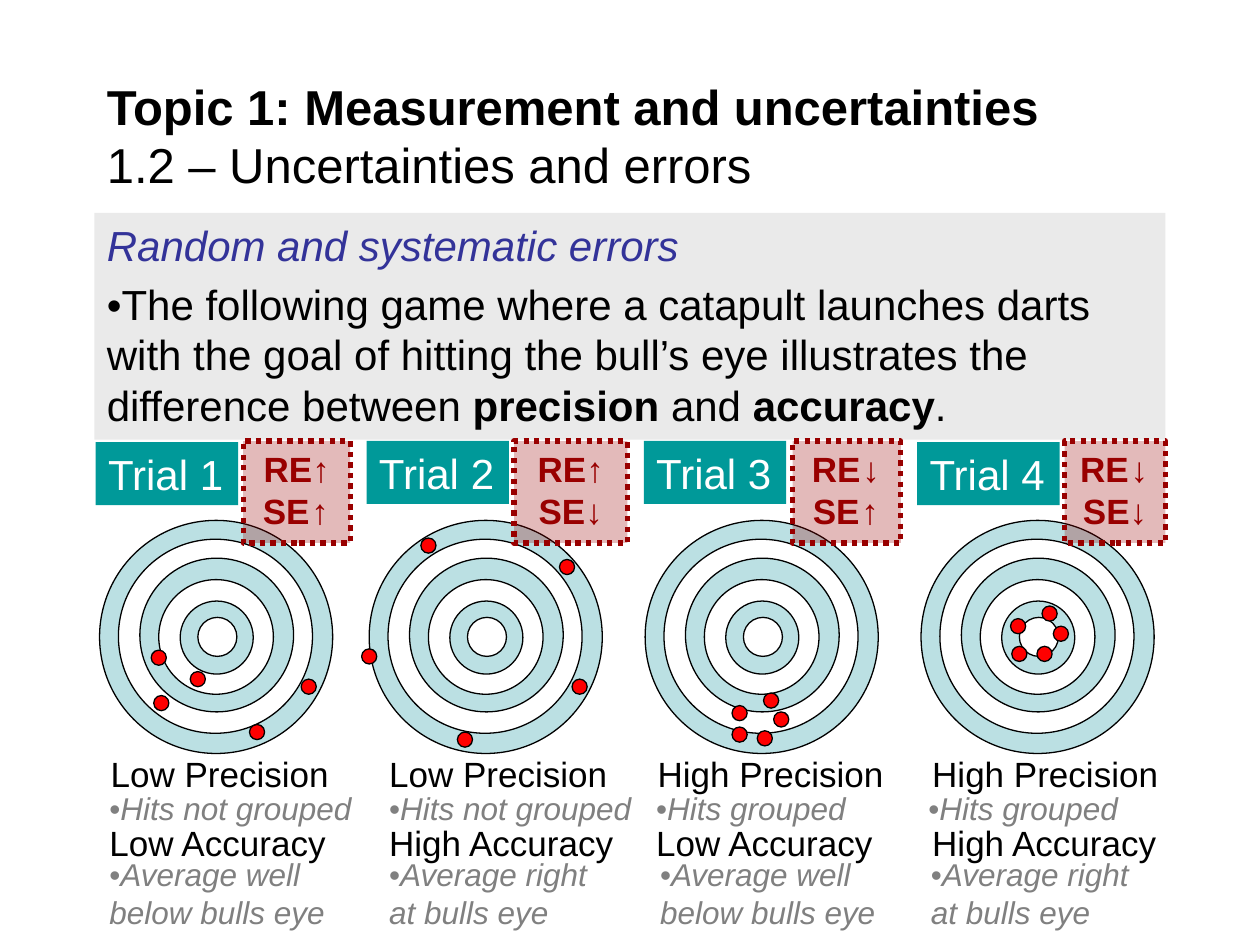
from lxml import etree
from pptx import Presentation
from pptx.dml.color import RGBColor
from pptx.enum.dml import MSO_LINE
from pptx.enum.shapes import MSO_SHAPE
from pptx.enum.text import MSO_ANCHOR, MSO_AUTO_SIZE, PP_ALIGN
from pptx.oxml.ns import qn
from pptx.util import Pt

PX = 9144  # 100 px to the inch
FONT, ARROW_FONT = "Arial", "Courier New"
COLORS = {
    "panel": "EAEAEA", "heading": "333399", "text": "000000", "note": "808080",
    "label": "009999", "white": "FFFFFF", "ring": "BBE0E3", "dart": "FF0000",
    "badge": "990000",
}
# Left offset, top offset and diameter, from the outside in
RINGS = [(0, 0, 185), (15, 15, 154), (32, 30, 122),
         (47, 47, 91), (64, 64, 58), (78, 77, 31)]
RINGS_TOP, DART_SIZE = 413, 12

LOW_PRECISION = [("Low Precision", 193), ("Hits not grouped", 215)]
HIGH_PRECISION = [("High Precision", 201), ("Hits grouped", 173)]
LOW_ACCURACY = [("Low Accuracy", 193), ("Average well below bulls eye", 194)]
HIGH_ACCURACY = [("High Accuracy", 199), ("Average right at bulls eye", 194)]
CAPTION_ROWS = [(592, 43), (621, 40), (647, 43), (674, 70)]

TRIALS = [
    {"label": (76, 351), "target": 79, "badge": (193, 85),
     "errors": [("RE↑SE", FONT), ("↑", ARROW_FONT)],
     "darts": [(198, 575), (120, 516), (122, 552), (151, 533), (239, 539)],
     "captions": LOW_PRECISION + LOW_ACCURACY, "lefts": [78, 77, 77, 77]},
    {"label": (291, 350), "target": 293, "badge": (408, 90),
     "errors": [("RE↑SE↓", FONT)],
     "darts": [(334, 427), (444, 444), (287, 515), (363, 581), (454, 539)],
     "captions": LOW_PRECISION + HIGH_ACCURACY, "lefts": [299] * 4},
    {"label": (511, 350), "target": 512, "badge": (629, 86),
     "errors": [("RE", FONT), ("↓", ARROW_FONT), ("SE", FONT), ("↑", ARROW_FONT)],
     "darts": [(601, 580), (606, 550), (581, 577), (581, 560), (614, 565)],
     "captions": HIGH_PRECISION + LOW_ACCURACY, "lefts": [512, 511, 511, 514]},
    {"label": (728, 351), "target": 731, "badge": (845, 80),
     "errors": [("RE", FONT), ("↓", ARROW_FONT), ("SE↓", FONT)],
     "darts": [(823, 513), (827, 481), (803, 513), (802, 491), (836, 497)],
     "captions": HIGH_PRECISION + HIGH_ACCURACY, "lefts": [730, 727, 730, 729]},
]


def rgb(name):
    return RGBColor.from_string(COLORS[name])


def box(*lengths):
    return [length * PX for length in lengths]


def style(paragraph, size, color, italic=None, bold=None):
    font = paragraph.font
    font.name, font.size = FONT, Pt(size)
    font.italic, font.bold = italic, bold
    font.color.rgb = rgb(color)
    paragraph.alignment = PP_ALIGN.LEFT


def add_run(paragraph, text, **settings):
    run = paragraph.add_run()
    run.text = text
    for key, value in settings.items():
        setattr(run.font, key, value)


def add_filled(shapes, kind, bounds, color, outlined=False):
    shape = shapes.add_shape(kind, *box(*bounds))
    shape.shadow.inherit = False
    shape.fill.solid()
    shape.fill.fore_color.rgb = rgb(color)
    if outlined:
        shape.line.color.rgb = rgb("text")
        shape.line.width = Pt(0.75)
    else:
        shape.line.fill.background()
    return shape


def set_frame(shape, wrap=True, grow=True):
    frame = shape.text_frame
    frame.word_wrap = wrap
    frame.vertical_anchor = MSO_ANCHOR.TOP
    frame.auto_size = MSO_AUTO_SIZE.SHAPE_TO_FIT_TEXT if grow else MSO_AUTO_SIZE.NONE
    return frame


def add_title(shapes):
    frame = set_frame(shapes.add_textbox(*box(75, 58, 850, 98)), grow=False)
    frame.vertical_anchor = MSO_ANCHOR.MIDDLE
    title = frame.paragraphs[0]
    style(title, 28, "text")
    add_run(title, "Topic 1: Measurement and uncertainties", bold=True)
    title.add_line_break()
    add_run(title, "1.2 – Uncertainties and errors")


def add_intro(shapes):
    panel = add_filled(shapes, MSO_SHAPE.RECTANGLE, (75, 169, 850, 180), "panel")
    frame = set_frame(panel, grow=False)
    heading = frame.paragraphs[0]
    style(heading, 24, "heading", italic=True)
    add_run(heading, "Random and systematic errors")
    body = frame.add_paragraph()
    style(body, 24, "text")
    heading.space_before = body.space_before = Pt(5)
    add_run(body, "•The following game where a catapult launches darts with the goal "
                  "of hitting the bull’s eye illustrates the difference between ")
    add_run(body, "precision", bold=True)
    add_run(body, " and ")
    add_run(body, "accuracy", bold=True)
    add_run(body, ".")


def add_label(shapes, position, number):
    label = add_filled(shapes, MSO_SHAPE.RECTANGLE, (*position, 113, 50), "label")
    name = set_frame(label, wrap=False).paragraphs[0]
    style(name, 24, "white")
    add_run(name, f"Trial {number}")


def add_target(shapes, left):
    target = shapes.add_group_shape()
    for index, (dx, dy, size) in enumerate(RINGS):
        color = "white" if index % 2 else "ring"
        add_filled(target.shapes, MSO_SHAPE.OVAL,
                   (left + dx, RINGS_TOP + dy, size, size), color, outlined=True)


def add_darts(shapes, positions):
    for position in positions:
        add_filled(shapes, MSO_SHAPE.OVAL, (*position, DART_SIZE, DART_SIZE),
                   "dart", outlined=True)


def add_captions(shapes, captions, lefts):
    rows = zip(captions, lefts, CAPTION_ROWS)
    for index, ((text, width), left, (top, height)) in enumerate(rows):
        caption = shapes.add_textbox(*box(left, top, width, height))
        # Only the last caption runs over two lines
        paragraph = set_frame(caption, wrap=index == 3).paragraphs[0]
        if index % 2:
            style(paragraph, 18, "note")
            add_run(paragraph, "•")
            add_run(paragraph, text, italic=True)
        else:
            style(paragraph, 20, "text")
            add_run(paragraph, text)


def add_badge(shapes, left, width, errors):
    badge = add_filled(shapes, MSO_SHAPE.RECTANGLE, (left, 350, width, 81), "badge")
    # Translucent fill
    color = badge.fill._xPr.find(qn("a:solidFill"))[0]
    etree.SubElement(color, qn("a:alpha"), val="27000")
    badge.line.color.rgb = rgb("badge")
    badge.line.width = Pt(3)
    badge.line.dash_style = MSO_LINE.ROUND_DOT
    paragraph = set_frame(badge).paragraphs[0]
    style(paragraph, 20, "badge", bold=True)
    paragraph.alignment = PP_ALIGN.CENTER
    for text, font_name in errors:
        add_run(paragraph, text, name=font_name)


def main():
    deck = Presentation()
    deck.slide_width, deck.slide_height = box(1000, 750)
    shapes = deck.slides.add_slide(deck.slide_layouts[6]).shapes

    add_intro(shapes)
    add_title(shapes)
    # Targets with their darts and captions
    for number, trial in enumerate(TRIALS, start=1):
        add_label(shapes, trial["label"], number)
        add_target(shapes, trial["target"])
        add_darts(shapes, trial["darts"])
        add_captions(shapes, trial["captions"], trial["lefts"])
    # Random and systematic error badges lie over the targets
    for trial in TRIALS:
        add_badge(shapes, *trial["badge"], trial["errors"])

    deck.save("out.pptx")


if __name__ == "__main__":
    main()
